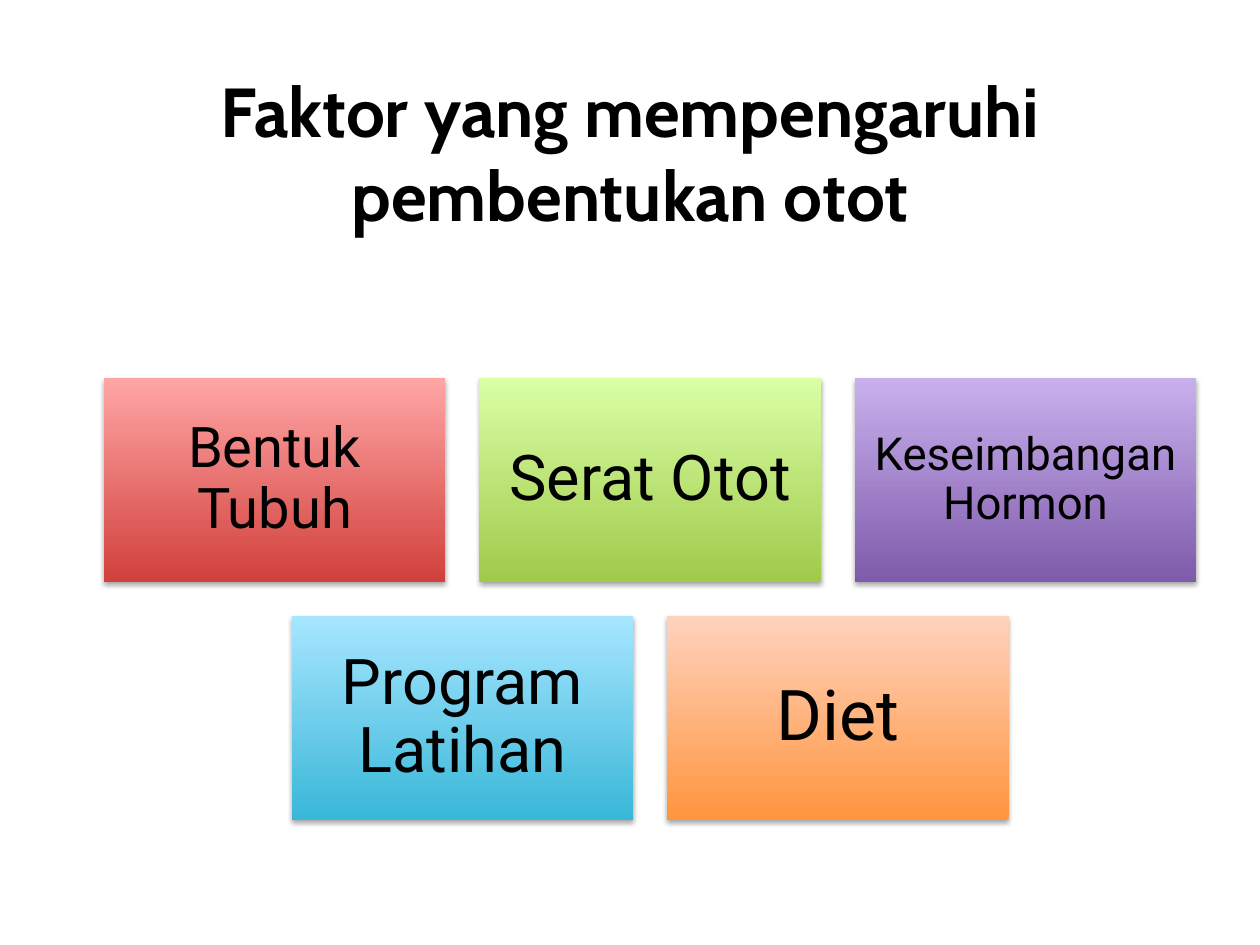
import pptx
import pptx.util
import pptx.dml.color
import pptx.enum.shapes
import pptx.enum.text
import pptx.oxml
import pptx.oxml.ns

Inches = pptx.util.Inches
Pt = pptx.util.Pt
RGBColor = pptx.dml.color.RGBColor
CENTER = pptx.enum.text.PP_ALIGN.CENTER
MIDDLE = pptx.enum.text.MSO_ANCHOR.MIDDLE

BLACK = RGBColor(0x00, 0x00, 0x00)
RED, PINK = RGBColor(0xD1, 0x40, 0x3C), RGBColor(0xFF, 0xA6, 0xA5)
GREEN, LIME = RGBColor(0xA0, 0xCA, 0x4A), RGBColor(0xDA, 0xFF, 0xA5)
PURPLE, LILAC = RGBColor(0x7F, 0x5B, 0xAB), RGBColor(0xC8, 0xB0, 0xED)
BLUE, SKY = RGBColor(0x39, 0xB7, 0xD8), RGBColor(0xA7, 0xE6, 0xFF)
ORANGE, PEACH = RGBColor(0xFF, 0x95, 0x3E), RGBColor(0xFF, 0xD2, 0xBD)

SHADOW = (
    f'<a:outerShdw {pptx.oxml.ns.nsdecls("a")} blurRad="{Pt(3.1)}" dist="{Pt(1.8)}" '
    'dir="5400000" rotWithShape="0"><a:srgbClr val="000000"><a:alpha val="35000"/>'
    '</a:srgbClr></a:outerShdw>'
)


def set_values(target, values):
    for name, value in values.items():
        setattr(target, name, value)


def write_text(frame, text, frame_format, para_format, font_format):
    set_values(frame, frame_format)
    para = frame.paragraphs[0]
    set_values(para, para_format)
    span = para.add_run()
    span.text = text
    set_values(span.font, font_format)
    span.font.color.rgb = BLACK


deck = pptx.Presentation()
set_values(deck, {"slide_width": Inches(10), "slide_height": Inches(7.5)})
page = deck.slides.add_slide(deck.slide_layouts[5])

title = page.shapes.title
set_values(title, {"left": Inches(0.5), "top": Inches(0.66),
                   "width": Inches(9), "height": Inches(1.09)})
write_text(
    title.text_frame,
    "Faktor yang mempengaruhi pembentukan otot",
    {"word_wrap": True, "vertical_anchor": MIDDLE,
     "auto_size": pptx.enum.text.MSO_AUTO_SIZE.NONE},
    {"alignment": CENTER},
    {"name": "Cabin", "size": Pt(39.6), "bold": True},
)

factor_rows = [
    [("Bentuk Tubuh", 32, 0.13, RED, PINK),
     ("Serat Otot", 36, 0.15, GREEN, LIME),
     ("Keseimbangan Hormon", 26, 0.11, PURPLE, LILAC)],
    [("Program Latihan", 36, 0.15, BLUE, SKY),
     ("Diet", 40, 0.17, ORANGE, PEACH)],
]
box_width, box_height, gap = 2.71, 1.62, 0.27
grid_center, grid_top = 5.16, 3

for row, factors in enumerate(factor_rows):
    row_width = len(factors) * (box_width + gap) - gap
    row_left = grid_center - row_width / 2
    for column, (label, size, inset, bottom_color, top_color) in enumerate(factors):
        box = page.shapes.add_shape(
            pptx.enum.shapes.MSO_SHAPE.RECTANGLE,
            Inches(row_left + column * (box_width + gap)),
            Inches(grid_top + row * (box_height + gap)),
            Inches(box_width), Inches(box_height),
        )
        box.line.fill.background()
        box.fill.gradient()
        box.fill.gradient_angle = 90
        for stop, color in zip(box.fill.gradient_stops, (bottom_color, top_color)):
            stop.color.rgb = color
        box.shadow.inherit = False
        effects = box.element.spPr.find(pptx.oxml.ns.qn("a:effectLst"))
        effects.append(pptx.oxml.parse_xml(SHADOW))
        margins = {f"margin_{side}": Inches(inset)
                   for side in ("left", "top", "right", "bottom")}
        write_text(
            box.text_frame, label,
            {"word_wrap": True, "vertical_anchor": MIDDLE, **margins},
            {"alignment": CENTER, "line_spacing": 0.9},
            {"name": "Roboto", "size": Pt(size)},
        )

deck.save("out.pptx")
